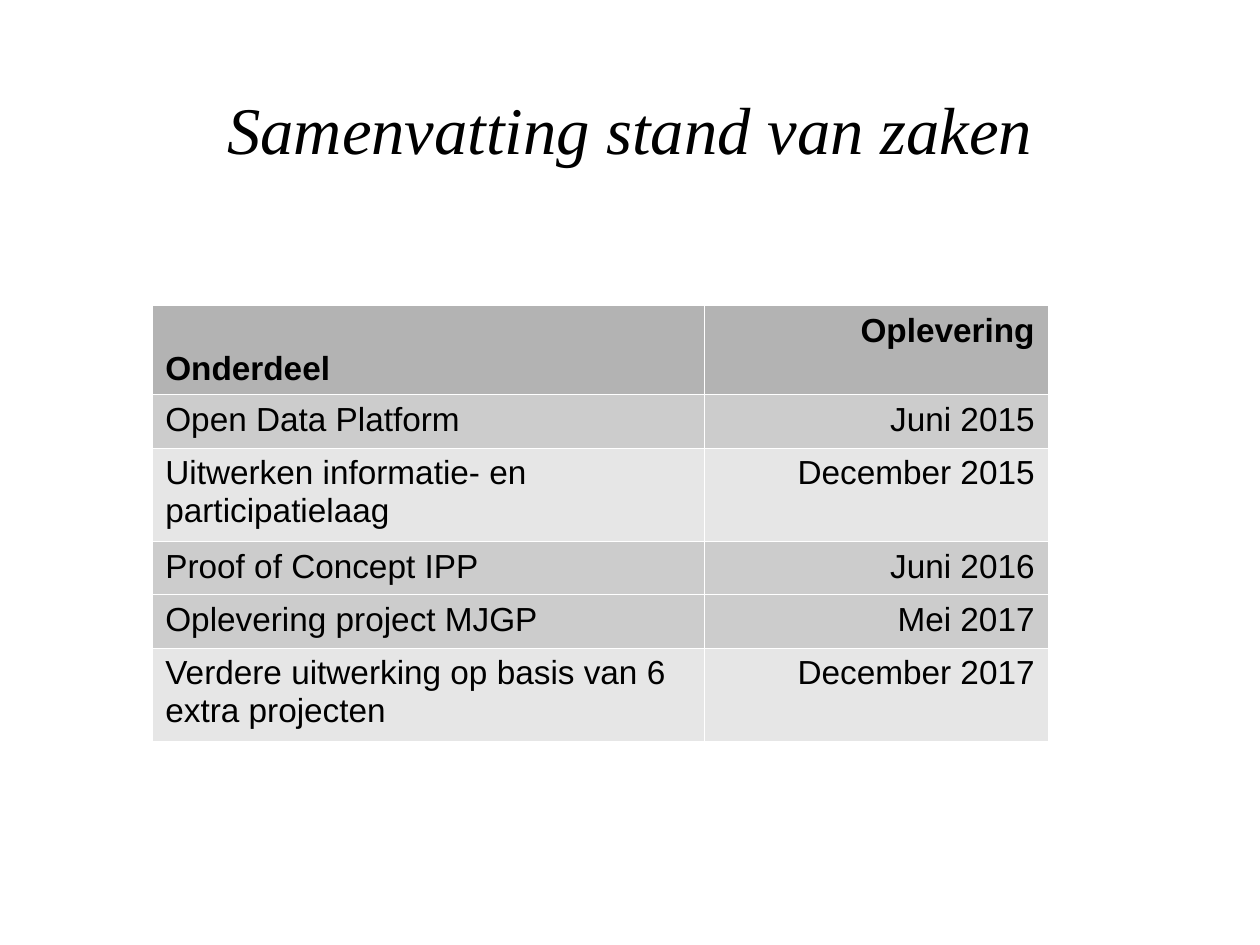
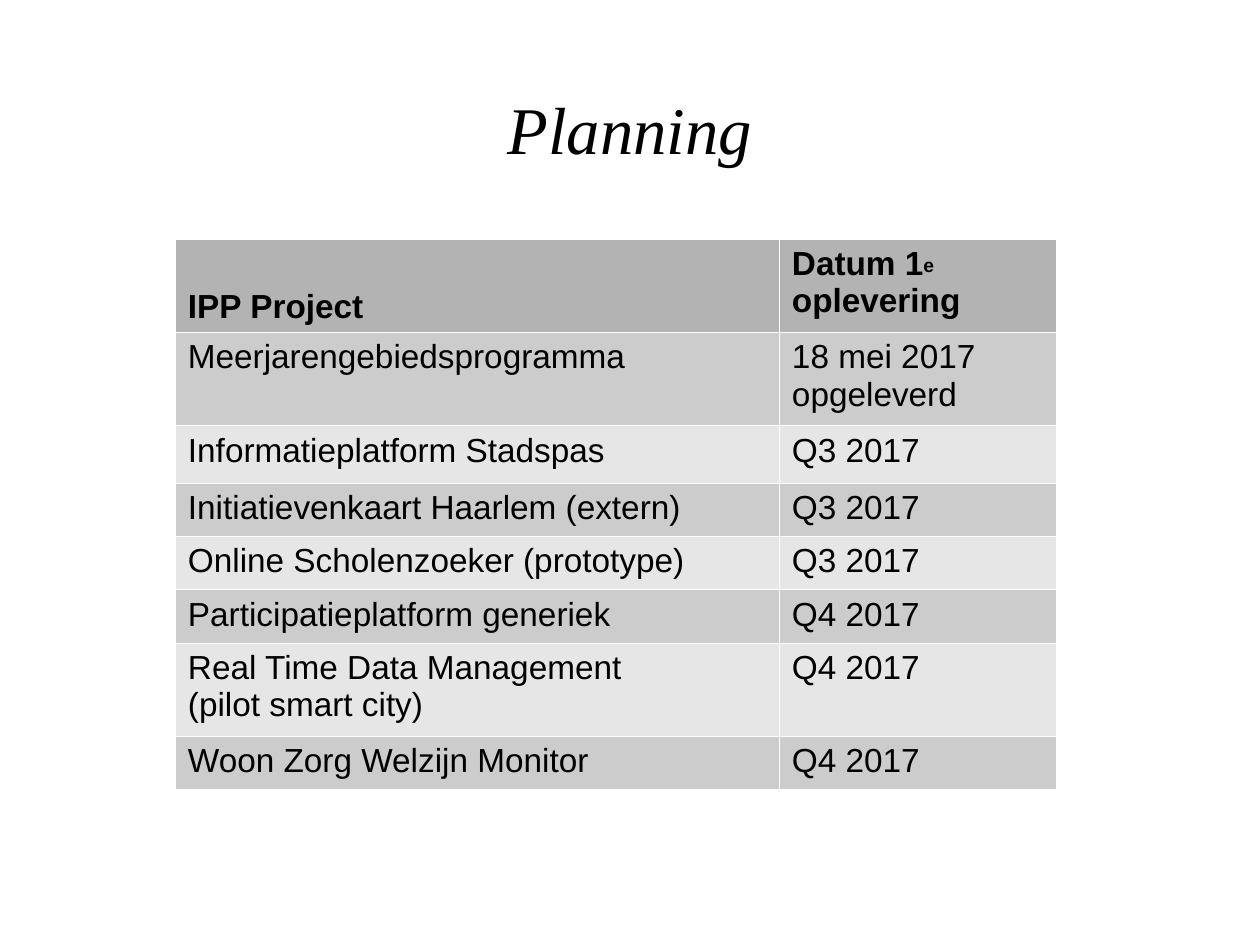
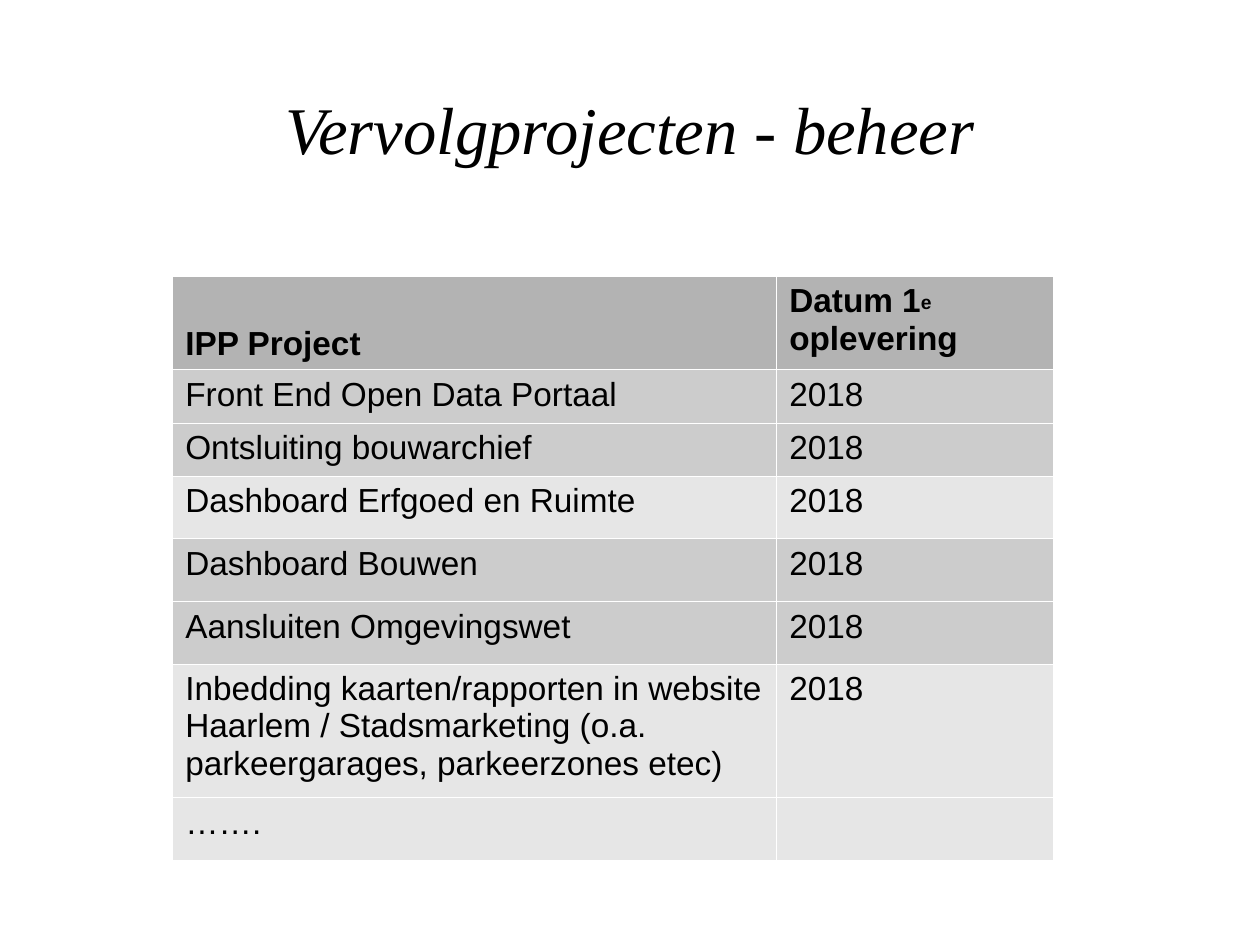
from dataclasses import dataclass

from lxml.etree import SubElement
from pptx import Presentation
from pptx.dml.color import RGBColor
from pptx.enum.text import MSO_ANCHOR as Anchor, PP_ALIGN as Align
from pptx.oxml.ns import qn
from pptx.slide import Slide
from pptx.table import _Cell as Cell
from pptx.text.text import _Paragraph as Paragraph
from pptx.util import Inches, Pt

BLACK = RGBColor(0x00, 0x00, 0x00)
HEADER_GRAY = RGBColor(0xB3, 0xB3, 0xB3)
DARK_GRAY = RGBColor(0xCC, 0xCC, 0xCC)
LIGHT_GRAY = RGBColor(0xE6, 0xE6, 0xE6)
BORDER_COLOR = "FFFFFF"
BORDER_WIDTH = Pt(0.06)

TITLE_FONT, TITLE_SIZE = "Times New Roman", Pt(36)
BODY_FONT, BODY_SIZE = "Arial", Pt(18)
SLIDE_WIDTH, SLIDE_HEIGHT = 9.45, 7.09
TITLE_TOP = 0.61
ORDINAL_BASELINE = "9000"


@dataclass(frozen=True)
class TextRun:
    text: str
    raised: bool = False


@dataclass(frozen=True)
class Row:
    label: str
    date: str
    height: float = 0.38
    fill: RGBColor = DARK_GRAY


@dataclass(frozen=True)
class TableSlide:
    title: str
    left: float
    top: float
    column_widths: tuple[float, float]
    header_height: float
    label_header: str
    date_header: tuple[TextRun, ...]
    rows: tuple[Row, ...]
    date_alignment: Align = Align.LEFT
    title_height: float = 1.2


FIRST_DELIVERY = (TextRun("Datum 1"), TextRun("e", raised=True), TextRun(" oplevering"))
PROJECT_COLUMNS = (4.53, 2.08)

TABLE_SLIDES = (
    TableSlide(
        "Samenvatting stand van zaken", 1.14, 2.29, (4.14, 2.58), 0.67,
        "Onderdeel", (TextRun("Oplevering"),),
        (
            Row("Open Data Platform", "Juni 2015"),
            Row("Uitwerken informatie- en participatielaag", "December 2015", 0.66, LIGHT_GRAY),
            Row("Proof of Concept IPP", "Juni 2016"),
            Row("Oplevering project MJGP", "Mei 2017"),
            Row("Verdere uitwerking op basis van 6 extra projecten", "December 2017",
                0.66, LIGHT_GRAY),
        ),
        date_alignment=Align.RIGHT,
    ),
    TableSlide(
        "Planning", 1.31, 1.79, PROJECT_COLUMNS, 0.68, "IPP Project", FIRST_DELIVERY,
        (
            Row("Meerjarengebiedsprogramma", "18 mei 2017 opgeleverd", 0.66),
            Row("Informatieplatform Stadspas", "Q3 2017", 0.43, LIGHT_GRAY),
            Row("Initiatievenkaart Haarlem (extern)", "Q3 2017"),
            Row("Online Scholenzoeker (prototype)", "Q3 2017", fill=LIGHT_GRAY),
            Row("Participatieplatform generiek", "Q4 2017"),
            Row("Real Time Data Management\n(pilot smart city)", "Q4 2017", 0.66, LIGHT_GRAY),
            Row("Woon Zorg Welzijn Monitor", "Q4 2017"),
        ),
        title_height=0.81,
    ),
    TableSlide(
        "Vervolgprojecten - beheer", 1.29, 2.07, PROJECT_COLUMNS, 0.68,
        "IPP Project", FIRST_DELIVERY,
        (
            Row("Front End Open Data Portaal", "2018"),
            Row("Ontsluiting bouwarchief", "2018"),
            Row("Dashboard Erfgoed en Ruimte", "2018", 0.47, LIGHT_GRAY),
            Row("Dashboard Bouwen", "2018", 0.47),
            Row("Aansluiten Omgevingswet", "2018", 0.47),
            Row("Inbedding kaarten/rapporten in website Haarlem / Stadsmarketing "
                "(o.a. parkeergarages, parkeerzones etec)", "2018", 0.94, LIGHT_GRAY),
            Row("…….", "", 0.47, LIGHT_GRAY),
        ),
    ),
)


def add_body_run(paragraph: Paragraph, text_run: TextRun, bold: bool) -> None:
    run = paragraph.add_run()
    run.text = text_run.text
    run.font.name = BODY_FONT
    run.font.size = BODY_SIZE
    run.font.bold = bold
    run.font.color.rgb = BLACK
    if text_run.raised:
        run.font._element.set("baseline", ORDINAL_BASELINE)


def style_cell(cell: Cell, fill: RGBColor) -> None:
    properties = cell._tc.get_or_add_tcPr()
    for side in ("a:lnL", "a:lnR", "a:lnT", "a:lnB"):
        line = SubElement(properties, qn(side), w=str(int(BORDER_WIDTH)))
        line_fill = SubElement(line, qn("a:solidFill"))
        SubElement(line_fill, qn("a:srgbClr"), val=BORDER_COLOR)
    cell.fill.solid()
    cell.fill.fore_color.rgb = fill


def write_cell(cell: Cell, text_runs: tuple[TextRun, ...], alignment: Align,
               bold: bool = False) -> None:
    paragraph = cell.text_frame.paragraphs[0]
    paragraph.alignment = alignment
    for text_run in text_runs:
        add_body_run(paragraph, text_run, bold)


def write_label(cell: Cell, label: str) -> None:
    """Write each line of the label as its own paragraph."""
    first_line, *other_lines = label.split("\n")
    write_cell(cell, (TextRun(first_line),), Align.LEFT)
    for line in other_lines:
        add_body_run(cell.text_frame.add_paragraph(), TextRun(line), False)


def add_title(slide: Slide, title: str, height: float) -> None:
    box = slide.shapes.add_textbox(
        Inches(0), Inches(TITLE_TOP), Inches(SLIDE_WIDTH), Inches(height))
    box.text_frame.word_wrap = True
    paragraph = box.text_frame.paragraphs[0]
    paragraph.alignment = Align.CENTER
    run = paragraph.add_run()
    run.text = title
    run.font.name = TITLE_FONT
    run.font.size = TITLE_SIZE
    run.font.italic = True
    run.font.color.rgb = BLACK


def add_project_table(slide: Slide, content: TableSlide) -> None:
    heights = [content.header_height, *(row.height for row in content.rows)]
    fills = [HEADER_GRAY, *(row.fill for row in content.rows)]
    table = slide.shapes.add_table(
        len(heights), len(content.column_widths),
        Inches(content.left), Inches(content.top),
        Inches(sum(content.column_widths)), Inches(sum(heights))).table
    table.horz_banding = False
    for column, width in zip(table.columns, content.column_widths):
        column.width = Inches(width)
    for table_row, height, fill in zip(table.rows, heights, fills):
        table_row.height = Inches(height)
        for cell in table_row.cells:
            style_cell(cell, fill)

    label_header, date_header = table.rows[0].cells
    label_header.vertical_anchor = Anchor.BOTTOM
    write_cell(label_header, (TextRun(content.label_header),), Align.LEFT, bold=True)
    write_cell(date_header, content.date_header, content.date_alignment, bold=True)
    for index, row in enumerate(content.rows, start=1):
        write_label(table.cell(index, 0), row.label)
        if row.date:
            write_cell(table.cell(index, 1), (TextRun(row.date),), content.date_alignment)


def main() -> None:
    presentation = Presentation()
    presentation.slide_width = Inches(SLIDE_WIDTH)
    presentation.slide_height = Inches(SLIDE_HEIGHT)
    blank_layout = presentation.slide_layouts[6]
    for content in TABLE_SLIDES:
        slide = presentation.slides.add_slide(blank_layout)
        add_title(slide, content.title, content.title_height)
        add_project_table(slide, content)
    presentation.save("out.pptx")


if __name__ == "__main__":
    main()
